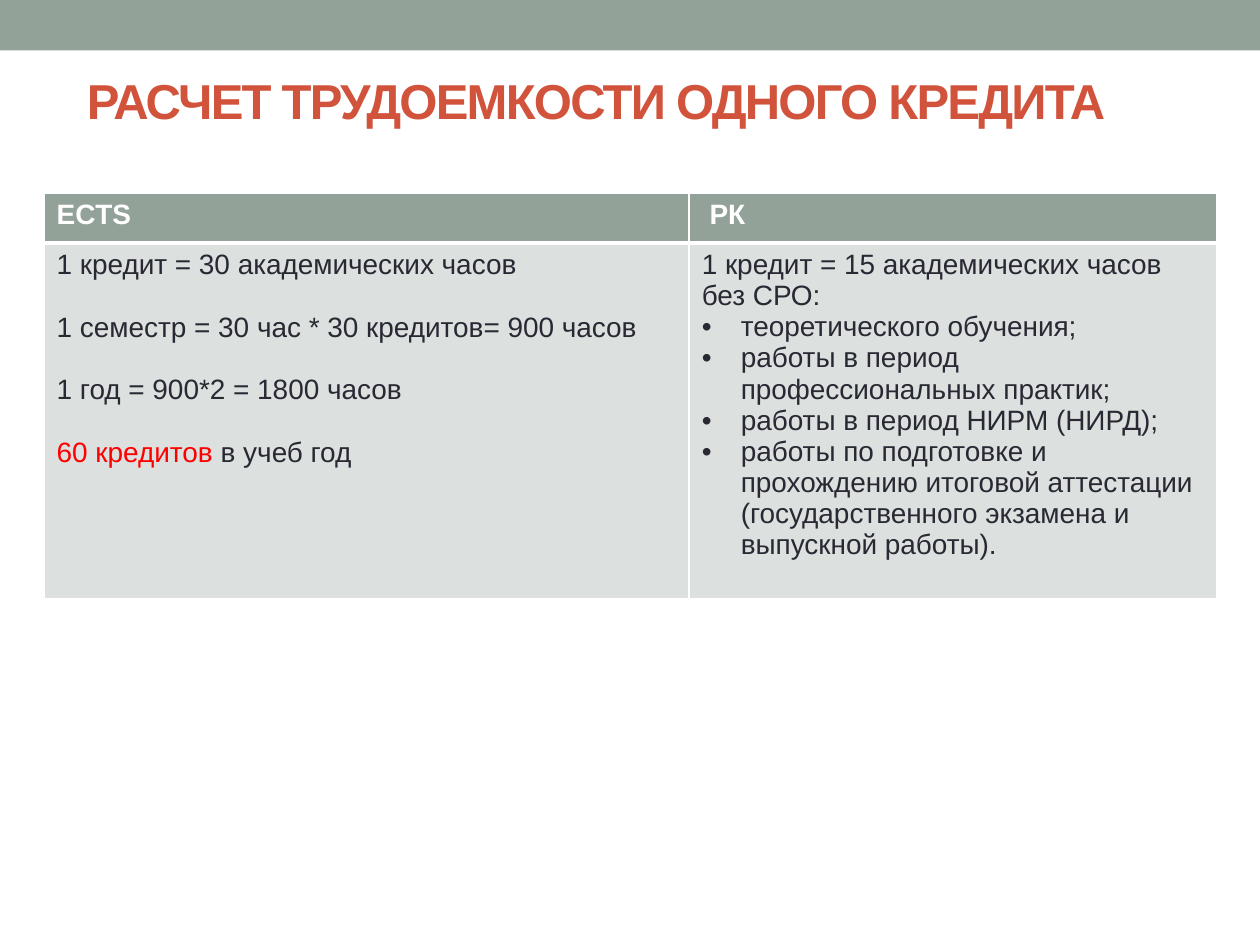
import pptx
import pptx.util
import pptx.dml.color
import pptx.enum.shapes
import pptx.enum.text
import pptx.oxml.ns
from dataclasses import dataclass
from lxml import etree

Inches, Pt = pptx.util.Inches, pptx.util.Pt
qn = pptx.oxml.ns.qn


@dataclass(frozen=True)
class Theme:
    font: str = "Arial"
    sage: str = "93A299"
    pale: str = "DCE0DE"
    rust: str = "D2533C"
    ink: str = "292934"
    red: str = "FF0000"
    white: str = "FFFFFF"
    title_size: int = 28
    body_size: int = 16


T = Theme()

HEADERS = ["ECTS", " РК"]
# Each paragraph is a list of (text, colour) runs
ECTS = [
    [("1 кредит = 30 академических часов", T.ink)],
    [("1 семестр = 30 час * 30 кредитов= 900 часов", T.ink)],
    [("1 год = 900*2 = 1800 часов", T.ink)],
    [("60 кредитов ", T.red), ("в учеб год", T.ink)],
]
RK_LEAD = "1 кредит = 15 академических часов без СРО:"
RK_ITEMS = [
    "теоретического обучения;",
    "работы в период профессиональных практик;",
    "работы в период НИРМ (НИРД);",
    "работы по подготовке и прохождению итоговой аттестации "
    "(государственного экзамена и выпускной работы).",
]


def rgb(color):
    return pptx.dml.color.RGBColor.from_string(color)


def add_run(p, text, color, size=T.body_size, bold=False):
    r = p.add_run()
    r.text = text
    for name, value in {"name": T.font, "size": Pt(size), "bold": bold}.items():
        setattr(r.font, name, value)
    r.font.color.rgb = rgb(color)
    return r


def add_paragraph(tf, first):
    return tf.paragraphs[0] if first else tf.add_paragraph()


def set_bullet(p, indent):
    pPr = p._p.get_or_add_pPr()
    pPr.set("marL", str(indent))
    pPr.set("indent", str(-indent))
    etree.SubElement(pPr, qn("a:buFont"), typeface=T.font)
    etree.SubElement(pPr, qn("a:buChar"), char="•")


def style_cell(cell, fill, borders):
    cell.fill.solid()
    cell.fill.fore_color.rgb = rgb(fill)
    tcPr = cell._tc.get_or_add_tcPr()
    for i, (side, width) in enumerate(borders.items()):
        ln = etree.Element(qn(f"a:ln{side}"), w=str(Pt(width)))
        solid = etree.SubElement(ln, qn("a:solidFill"))
        etree.SubElement(solid, qn("a:srgbClr"), val=T.white)
        tcPr.insert(i, ln)


def add_band(s, x, y, w, h):
    sp = s.shapes.add_shape(pptx.enum.shapes.MSO_SHAPE.RECTANGLE, x, y, w, h)
    sp.shadow.inherit = False
    sp.fill.solid()
    sp.fill.fore_color.rgb = rgb(T.sage)
    sp.line.fill.background()


def add_title(s, x, y, w, h):
    tf = s.shapes.add_textbox(x, y, w, h).text_frame
    # The deep bottom margin lifts the line into the upper half of the box
    layout = {
        "word_wrap": True,
        "vertical_anchor": pptx.enum.text.MSO_ANCHOR.MIDDLE,
        "margin_bottom": Inches(0.5),
    }
    for name, value in layout.items():
        setattr(tf, name, value)
    r = add_run(tf.paragraphs[0], "РАСЧЕТ ТРУДОЕМКОСТИ ОДНОГО КРЕДИТА",
                T.rust, T.title_size, True)
    r._r.get_or_add_rPr().set("spc", "-100")


def add_credit_table(s, x, y, w, h):
    table = s.shapes.add_table(2, 2, x, y, w, h).table
    table.columns[0].width = Inches(5.12)
    table.columns[1].width = w - Inches(5.12)
    table.rows[0].height = Inches(0.4)
    table.rows[1].height = h - Inches(0.4)

    # Header and body cells, divided by a thick rule
    for col, header in enumerate(HEADERS):
        head, body = table.cell(0, col), table.cell(1, col)
        style_cell(head, T.sage, {"L": 1, "R": 1, "T": 1, "B": 3})
        style_cell(body, T.pale, {"L": 1, "R": 1, "T": 3, "B": 1})
        add_run(head.text_frame.paragraphs[0], header, T.white, bold=True)

    # ECTS column: statements one line apart
    tf = table.cell(1, 0).text_frame
    for i, runs in enumerate(ECTS):
        p = add_paragraph(tf, i == 0)
        p.space_before = Pt(18 if i else 0)
        for text, color in runs:
            add_run(p, text, color)

    # RK column: lead sentence and bullets
    tf = table.cell(1, 1).text_frame
    add_run(tf.paragraphs[0], RK_LEAD, T.ink)
    for item in RK_ITEMS:
        p = add_paragraph(tf, False)
        set_bullet(p, Inches(0.31))
        add_run(p, item, T.ink)


def main():
    prs = pptx.Presentation()
    prs.slide_width, prs.slide_height = Inches(10), Inches(7.5)
    s = prs.slides.add_slide(prs.slide_layouts[6])
    add_band(s, 0, 0, prs.slide_width, Inches(0.4))
    add_title(s, Inches(0.59), Inches(0.5), Inches(8.98), Inches(1.04))
    add_credit_table(s, Inches(0.35), Inches(1.53), Inches(9.31), Inches(3.22))
    prs.save("out.pptx")


if __name__ == "__main__":
    main()
